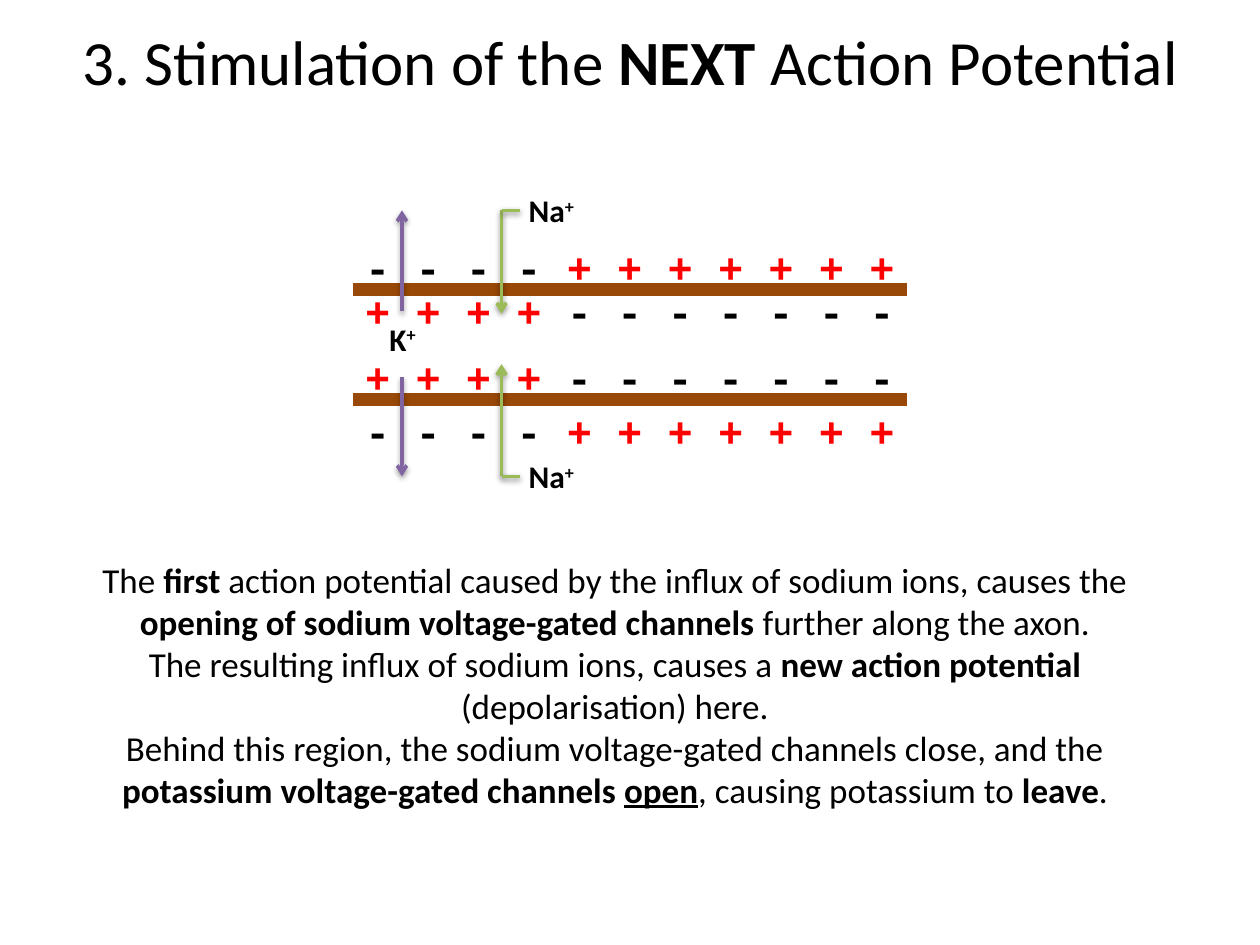
"""Build a slide on how one action potential stimulates the next."""
from lxml import etree
from pptx import Presentation
from pptx.dml.color import RGBColor
from pptx.enum.shapes import MSO_CONNECTOR
from pptx.enum.text import MSO_ANCHOR, MSO_AUTO_SIZE, PP_ALIGN
from pptx.oxml import parse_xml
from pptx.oxml.ns import qn
from pptx.util import Pt

STRAIGHT = MSO_CONNECTOR.STRAIGHT
CENTER, LEFT = PP_ALIGN.CENTER, PP_ALIGN.LEFT
MIDDLE, TOP = MSO_ANCHOR.MIDDLE, MSO_ANCHOR.TOP
GROW, FIXED = MSO_AUTO_SIZE.SHAPE_TO_FIT_TEXT, MSO_AUTO_SIZE.NONE
LEFT_SIDE = 1

COLORS = {
    "text": "000000",
    "positive": "FF0000",
    "membrane": "984807",
    "sodium": "9BBB59",
    "potassium": "8064A2",
}
BOLD = {"bold": True}
SHADOW = (
    '<a:effectLst xmlns:a="http://schemas.openxmlformats.org/drawingml/2006/main">'
    '<a:outerShdw blurRad="{blur}" dist="{dist}" dir="5400000" rotWithShape="0">'
    '<a:srgbClr val="000000"><a:alpha val="38000"/></a:srgbClr>'
    "</a:outerShdw></a:effectLst>"
)

TITLE = [[("3. Stimulation of the ", {}), ("NEXT", BOLD), (" Action Potential", {})]]
EXPLANATION = [
    [
        ("The ", {}),
        ("first ", BOLD),
        ("action potential caused by the influx of sodium ions, causes the ", {}),
        ("opening of sodium voltage-gated channels", BOLD),
        (" further along the axon.", {}),
    ],
    [
        ("The resulting influx of sodium ions, causes a ", {}),
        ("new action potential ", BOLD),
        ("(depolarisation) here.", {}),
    ],
    [
        ("Behind this region, the sodium voltage-gated channels close, and the ", {}),
        ("potassium voltage-gated channels ", BOLD),
        ("open", {"bold": True, "underline": True}),
        (", causing potassium to ", {}),
        ("leave", BOLD),
        (".", {}),
    ],
]

AXON_LEFT, AXON_RIGHT = 201.6, 518.4
MEMBRANE_LEVELS = (165.6, 228.2)
CHARGE_ROWS = ((134.6, "-"), (159.8, "+"), (197.3, "+"), (228.2, "-"))
ACTIVE_COUNT, RESTING_COUNT = 4, 7
ION_WIDTH, ION_HEIGHT = 56.9, 28.8
SODIUM_X, POTASSIUM_X = 286.6, 229.7
SODIUM_FLOWS = ((120.2, 179.3), (272.2, 208.1))
POTASSIUM_FLOWS = ((177.8, 120.2), (215.3, 272.2))


def add_text(slide, box, paragraphs, size, font="Calibri", align=CENTER,
             anchor=TOP, fit=GROW):
    """Add a text box whose runs are (text, format values) pairs."""
    text_box = slide.shapes.add_textbox(*map(Pt, box))
    frame = text_box.text_frame
    settings = {"word_wrap": True, "auto_size": fit, "vertical_anchor": anchor}
    for name, value in settings.items():
        setattr(frame, name, value)
    for index, runs in enumerate(paragraphs):
        paragraph = frame.paragraphs[0] if index == 0 else frame.add_paragraph()
        paragraph.alignment = align
        for text, formats in runs:
            run = paragraph.add_run()
            run.text = text
            values = {"name": font, "size": Pt(size), "bold": False, **formats}
            color = values.pop("color", "text")
            baseline = values.pop("baseline", None)
            for name, value in values.items():
                setattr(run.font, name, value)
            run.font.color.rgb = RGBColor.from_string(COLORS[color])
            if baseline:
                run._r.get_or_add_rPr().set("baseline", baseline)
    return text_box


def add_line(slide, start, end, color, width, arrow=False, shadow=False):
    """Add a straight connector, with an arrowhead or a soft shadow if asked."""
    line = slide.shapes.add_connector(STRAIGHT, *map(Pt, (*start, *end)))
    line.line.color.rgb = RGBColor.from_string(COLORS[color])
    line.line.width = Pt(width)
    properties = line._element.spPr
    if arrow:
        outline = properties.find(qn("a:ln"))
        etree.SubElement(outline, qn("a:tailEnd"), type="arrow")
    if shadow:
        effect = SHADOW.format(blur=Pt(3.1), dist=Pt(1.6))
        properties.append(parse_xml(effect))
    else:
        etree.SubElement(properties, qn("a:effectLst"))
    return line


def add_ion(slide, left, top, symbol):
    """Add the label of a positive ion."""
    runs = [(symbol, BOLD), ("+", {"bold": True, "baseline": "30000"})]
    return add_text(slide, (left, top, ION_WIDTH, ION_HEIGHT), [runs], 18)


def add_charges(slide, top, active_sign):
    """Add a row of charges that flips sign after the active region."""
    resting_sign = "+" if active_sign == "-" else "-"
    groups = (
        (active_sign, " ".join(active_sign * ACTIVE_COUNT)),
        (resting_sign, " " + " ".join(resting_sign * RESTING_COUNT)),
    )
    runs = [
        (text, {"bold": True, "color": "positive" if sign == "+" else "text"})
        for sign, text in groups
    ]
    add_text(slide, (AXON_LEFT, top, 329, 36), [runs], 24, "Courier New", LEFT)


def add_sodium_flow(slide, label, outside, inside):
    """Add the bent arrow that leads from a sodium label into the axon."""
    ends = (((SODIUM_X, inside), True), ((SODIUM_X + 10.8, outside), False))
    for end, arrow in ends:
        flow = add_line(slide, (SODIUM_X, outside), end, "sodium", 2, arrow, True)
        flow.begin_connect(label, LEFT_SIDE)


def main():
    """Build and save the slide."""
    presentation = Presentation()
    presentation.slide_width, presentation.slide_height = Pt(720), Pt(540)
    slide = presentation.slides.add_slide(presentation.slide_layouts[6])

    add_text(slide, (36, 20.9, 648, 27.4), TITLE, 36, anchor=MIDDLE, fit=FIXED)
    add_text(slide, (42.5, 315.4, 617.8, 152.6), EXPLANATION, 20)
    sodium_labels = [
        add_ion(slide, SODIUM_X, outside - ION_HEIGHT / 2, "Na")
        for outside, _ in SODIUM_FLOWS
    ]
    add_ion(slide, AXON_LEFT, 179.3, "K")

    for level in MEMBRANE_LEVELS:
        add_line(slide, (AXON_LEFT, level), (AXON_RIGHT, level), "membrane", 7.5)
    for top, active_sign in CHARGE_ROWS:
        add_charges(slide, top, active_sign)
    for label, (outside, inside) in zip(sodium_labels, SODIUM_FLOWS):
        add_sodium_flow(slide, label, outside, inside)
    for inside, outside in POTASSIUM_FLOWS:
        add_line(slide, (POTASSIUM_X, inside), (POTASSIUM_X, outside),
                 "potassium", 2, arrow=True, shadow=True)

    presentation.save("out.pptx")


if __name__ == "__main__":
    main()
